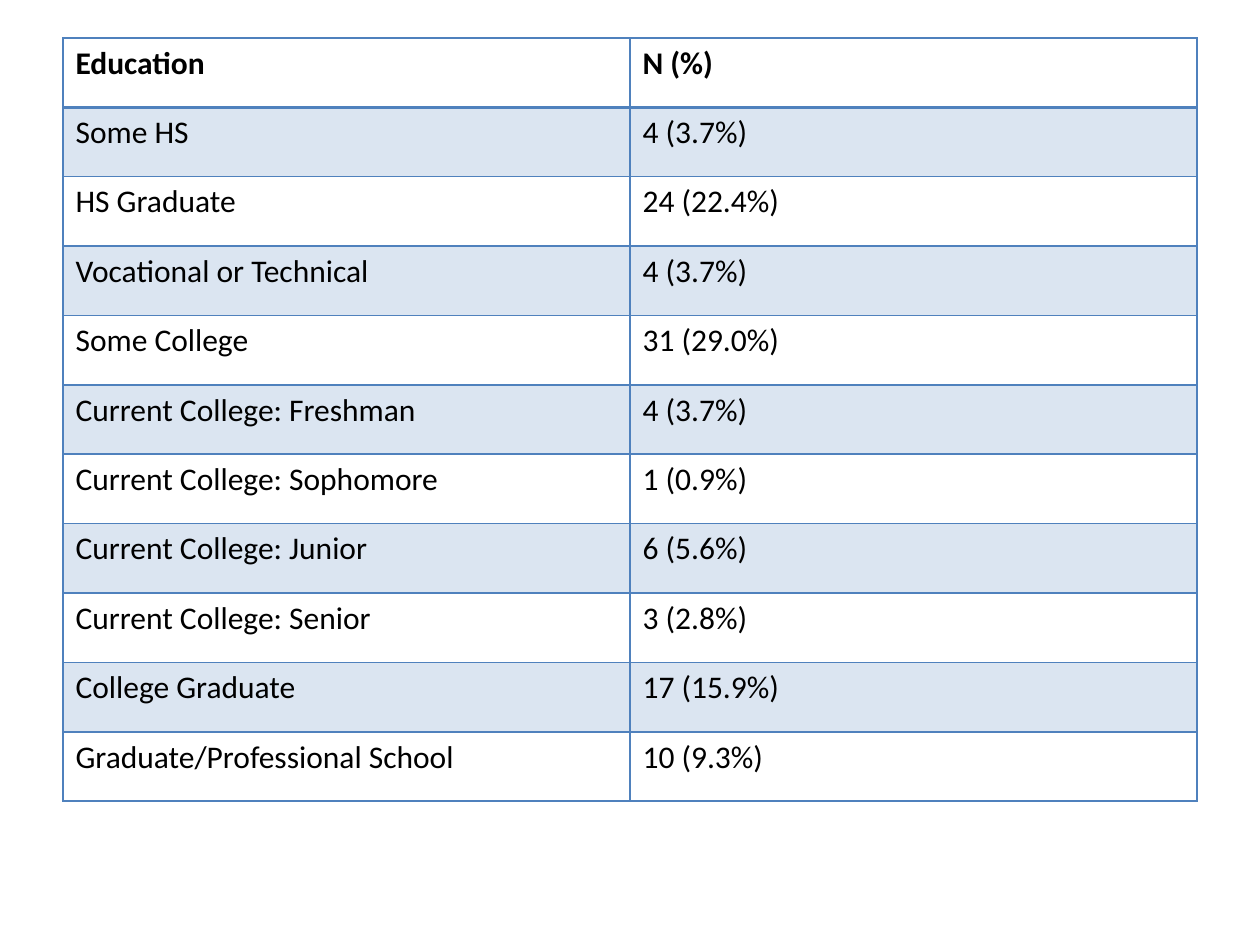
from lxml import etree
from pptx import Presentation
from pptx import util as u
from pptx.dml.color import RGBColor
from pptx.oxml import ns

EDUCATION = [
    ("Education", "N (%)"),
    ("Some HS", "4 (3.7%)"),
    ("HS Graduate", "24 (22.4%)"),
    ("Vocational or Technical", "4 (3.7%)"),
    ("Some College", "31 (29.0%)"),
    ("Current College: Freshman", "4 (3.7%)"),
    ("Current College: Sophomore", "1 (0.9%)"),
    ("Current College: Junior", "6 (5.6%)"),
    ("Current College: Senior", "3 (2.8%)"),
    ("College Graduate", "17 (15.9%)"),
    ("Graduate/Professional School", "10 (9.3%)"),
]


def rgb(value):
    return RGBColor.from_string(value)


class Deck:
    """Holds the style and the current slide, on a grid of 20 by 25."""
    COLS, ROWS = 20, 25
    ACCENT = "4F81BD"
    BAND_ALPHA = 20
    FONT = {"name": "Calibri", "size": u.Pt(18)}
    TEXT = "000000"

    def __init__(self, width, height):
        self.prs = Presentation()
        self.prs.slide_width, self.prs.slide_height = u.Inches(width), u.Inches(height)
        self.s = None

    def slide(self):
        self.s = self.prs.slides.add_slide(self.prs.slide_layouts[6])

    def box(self, col, row, cols, rows):
        dx = self.prs.slide_width / self.COLS
        dy = self.prs.slide_height / self.ROWS
        return [round(n) for n in (col * dx, row * dy, cols * dx, rows * dy)]

    def label(self, cell, words, bold):
        r = cell.text_frame.paragraphs[0].add_run()
        r.text = words
        for key, value in {**self.FONT, "bold": bold}.items():
            setattr(r.font, key, value)
        r.font.color.rgb = rgb(self.TEXT)

    def shade(self, cell, banded):
        if not banded:
            cell.fill.background()
            return
        cell.fill.solid()
        cell.fill.fore_color.rgb = rgb(self.ACCENT)
        color = cell._tc.tcPr.find(".//" + ns.qn("a:srgbClr"))
        etree.SubElement(color, ns.qn("a:alpha"), val=str(self.BAND_ALPHA * 1000))

    def borders(self, cell, widths):
        # Border lines come before the fill in the cell properties
        tc_pr = cell._tc.get_or_add_tcPr()
        for i, (side, width) in enumerate(widths.items()):
            ln = etree.Element(ns.qn("a:ln" + side), w=str(u.Pt(width)))
            solid = etree.SubElement(ln, ns.qn("a:solidFill"))
            etree.SubElement(solid, ns.qn("a:srgbClr"), val=self.ACCENT)
            tc_pr.insert(i, ln)

    def table(self, data, *grid):
        tbl = self.s.shapes.add_table(len(data), len(data[0]), *self.box(*grid)).table
        tbl.first_row = tbl.horz_banding = False
        for i, row in enumerate(data):
            for j, words in enumerate(row):
                cell = tbl.cell(i, j)
                self.label(cell, words, bold=i == 0)
                self.shade(cell, banded=i % 2 == 1)
                # The rule below the header is twice as thick
                self.borders(cell, {"L": 1, "R": 1, "T": 2 if i == 1 else 1,
                                    "B": 2 if i == 0 else 1})


def main():
    deck = Deck(10, 7.5)
    deck.slide()
    # Education levels with counts and shares
    deck.table(EDUCATION, 1, 1, 18, 20.2)
    deck.prs.save("out.pptx")


if __name__ == "__main__":
    main()
